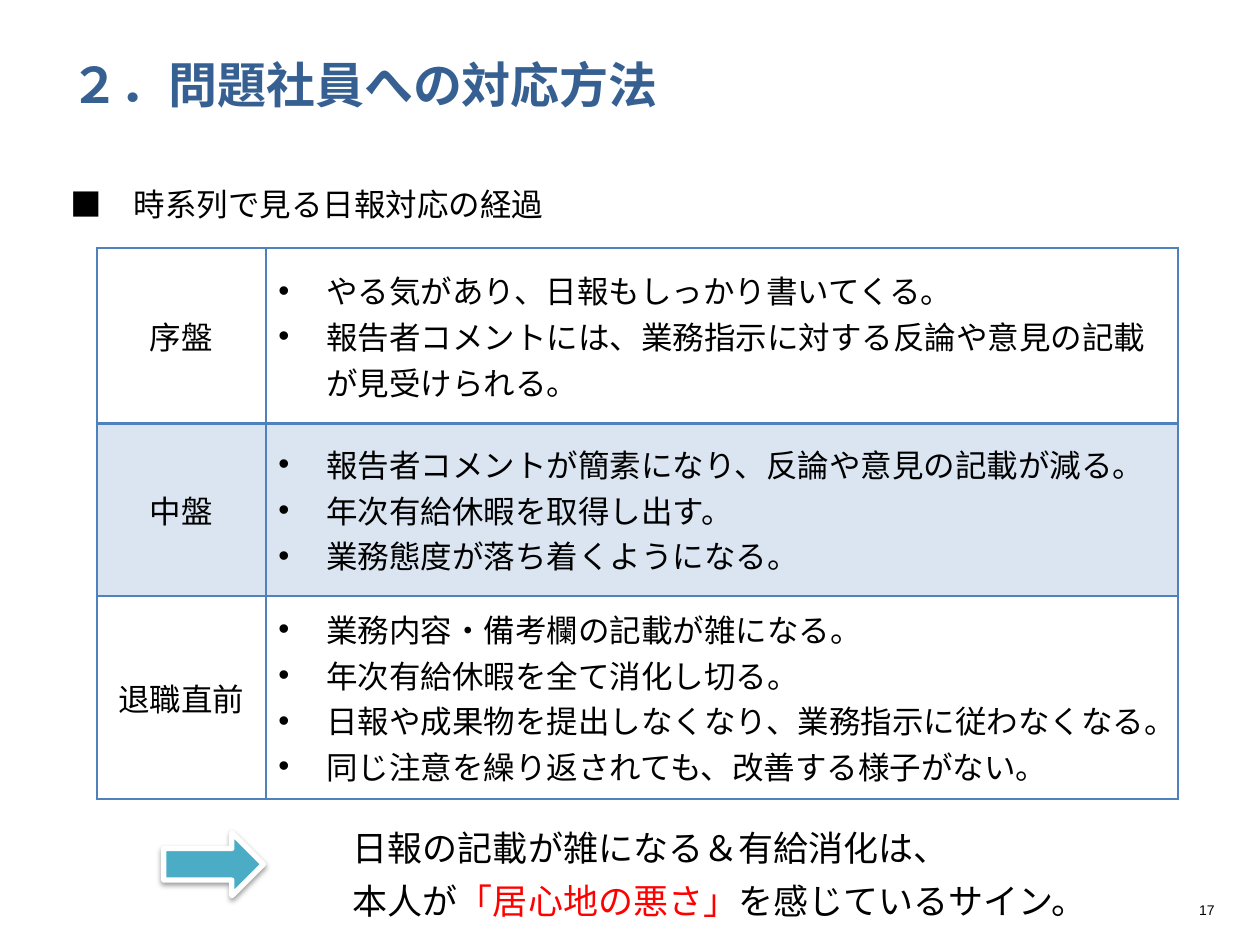
from pptx import Presentation
from pptx.dml.color import RGBColor
from pptx.enum import shapes, text
from pptx.oxml import ns, xmlchemy
from pptx.util import Inches, Pt

BLACK = RGBColor(0x00, 0x00, 0x00)
WHITE = RGBColor(0xFF, 0xFF, 0xFF)
RED = RGBColor(0xFF, 0x00, 0x00)
NAVY = RGBColor(0x37, 0x60, 0x92)
BLUE = RGBColor(0x4F, 0x81, 0xBD)
TEAL = RGBColor(0x4B, 0xAC, 0xC6)
FONT = "Noto Sans CJK JP"

STAGES = [
    ("序盤", 1.39, [
        "やる気があり、日報もしっかり書いてくる。",
        "報告者コメントには、業務指示に対する反論や意見の記載が見受けられる。",
    ]),
    ("中盤", 1.37, [
        "報告者コメントが簡素になり、反論や意見の記載が減る。",
        "年次有給休暇を取得し出す。",
        "業務態度が落ち着くようになる。",
    ]),
    ("退職直前", 1.61, [
        "業務内容・備考欄の記載が雑になる。",
        "年次有給休暇を全て消化し切る。",
        "日報や成果物を提出しなくなり、業務指示に従わなくなる。",
        "同じ注意を繰り返されても、改善する様子がない。",
    ]),
]


def add_element(parent, tag, **attributes):
    child = xmlchemy.OxmlElement(tag)
    for name, value in attributes.items():
        child.set(name, str(value))
    parent.append(child)
    return child


class SlideBuilder:
    """Holds the font and the current slide."""

    def __init__(self, slide, font):
        self.slide = slide
        self.font = font

    def style_run(self, run, size, color, bold=False, font=None):
        name = font or self.font
        run.font.size = Pt(size)
        run.font.bold = bold
        run.font.color.rgb = color
        run.font.name = name
        add_element(run.font._element, "a:ea", typeface=name)

    def add_spans(self, para, spans, size, align, spacing=None, bold=False, font=None):
        """Fill a paragraph with (wording, colour) spans."""
        para.alignment = align
        para.line_spacing = spacing
        for wording, color in spans:
            run = para.add_run()
            run.text = wording
            self.style_run(run, size, color, bold, font)

    def place(self, box, left, top, width, height, anchor, wrap=True):
        box.left, box.top = Inches(left), Inches(top)
        box.width, box.height = Inches(width), Inches(height)
        frame = box.text_frame
        frame.auto_size = text.MSO_AUTO_SIZE.NONE
        frame.word_wrap = wrap
        frame.vertical_anchor = anchor
        frame.margin_left = frame.margin_right = 0
        frame.margin_top = frame.margin_bottom = 0
        return frame

    def title(self, wording):
        frame = self.place(self.slide.shapes.title, 0.56, 0.47, 8.89, 0.43,
                           text.MSO_ANCHOR.BOTTOM)
        self.add_spans(frame.paragraphs[0], [(wording, NAVY)], 28, text.PP_ALIGN.LEFT, bold=True)

    def heading(self, wording):
        frame = self.place(self.slide.placeholders[1], 0.56, 1.39, 8.89, 0.5,
                           text.MSO_ANCHOR.TOP)
        para = frame.paragraphs[0]
        properties = para._p.get_or_add_pPr()
        properties.set("marL", "0")
        properties.set("indent", "0")
        add_element(properties, "a:buNone")
        para.space_before = Pt(0)
        self.add_spans(para, [(wording, BLACK)], 18, text.PP_ALIGN.JUSTIFY, 1.25)

    def text_box(self, place, lines, size, align, anchor=text.MSO_ANCHOR.TOP, wrap=True,
                 spacing=None, font=None):
        box = self.slide.shapes.add_textbox(0, 0, 0, 0)
        frame = self.place(box, *place, anchor, wrap)
        for index, spans in enumerate(lines):
            para = frame.add_paragraph() if index else frame.paragraphs[0]
            self.add_spans(para, spans, size, align, spacing, font=font)

    def border(self, cell, side, width):
        line = add_element(cell._tc.get_or_add_tcPr(), "a:ln" + side, w=Pt(width))
        fill = add_element(line, "a:solidFill")
        add_element(fill, "a:srgbClr", val=BLUE)

    def cell(self, cell, lines, bulleted, top, bottom, tinted):
        cell.vertical_anchor = text.MSO_ANCHOR.MIDDLE
        for side, width in (("L", 1), ("R", 1), ("T", top), ("B", bottom)):
            self.border(cell, side, width)
        if tinted:
            cell.fill.solid()
            cell.fill.fore_color.rgb = BLUE
            color = cell._tc.tcPr.find(ns.qn("a:solidFill")).find(ns.qn("a:srgbClr"))
            add_element(color, "a:alpha", val=20000)
        else:
            cell.fill.background()
        align = text.PP_ALIGN.LEFT if bulleted else text.PP_ALIGN.CENTER
        for index, wording in enumerate(lines):
            para = cell.text_frame.add_paragraph() if index else cell.text_frame.paragraphs[0]
            if bulleted:
                properties = para._p.get_or_add_pPr()
                properties.set("marL", str(Inches(0.38)))
                properties.set("indent", str(-Inches(0.38)))
                properties.set("hangingPunct", "1")
                add_element(properties, "a:buFont", typeface="Arial")
                add_element(properties, "a:buChar", char="•")
            self.add_spans(para, [(wording, BLACK)], 18, align)

    def stage_table(self, stages):
        frame = self.slide.shapes.add_table(len(stages), 2, Inches(0.77), Inches(1.97),
                                            Inches(8.58), Inches(4.37))
        table = frame.table
        table.first_row = table.horz_banding = False
        for column, width in zip(table.columns, (1.34, 7.24)):
            column.width = Inches(width)
        for index, (stage, height, signs) in enumerate(stages):
            table.rows[index].height = Inches(height)
            top = 2 if index == 1 else 1
            bottom = 2 if index == 0 else 1
            for column, lines in enumerate(([stage], signs)):
                self.cell(table.cell(index, column), lines, column == 1, top, bottom,
                          tinted=index % 2 == 1)

    def arrow(self, left, top, width, height):
        arrow = self.slide.shapes.add_shape(
            shapes.MSO_SHAPE.RIGHT_ARROW, Inches(left), Inches(top), Inches(width), Inches(height))
        arrow.fill.solid()
        arrow.fill.fore_color.rgb = TEAL
        arrow.line.color.rgb = WHITE
        arrow.line.width = Pt(3)
        arrow.shadow.inherit = False
        effects = arrow._element.spPr.find(ns.qn("a:effectLst"))
        shadow = add_element(effects, "a:outerShdw", blurRad=40000, dist=20000,
                             dir=5400000, rotWithShape=0)
        color = add_element(shadow, "a:srgbClr", val=BLACK)
        add_element(color, "a:alpha", val=38000)


def main():
    deck = Presentation()
    deck.slide_width, deck.slide_height = Inches(10), Inches(7.5)
    page = SlideBuilder(deck.slides.add_slide(deck.slide_layouts[1]), FONT)

    page.title("２．問題社員への対応方法")
    page.heading("■　時系列で見る日報対応の経過")
    page.stage_table(STAGES)
    page.arrow(1.3, 6.61, 0.79, 0.5)
    conclusion = [
        [("日報の記載が雑になる＆有給消化は、", BLACK)],
        [("本人が", BLACK), ("「居心地の悪さ」", RED), ("を感じているサイン。", BLACK)],
    ]
    page.text_box((2.8, 6.48, 7, 0.61), conclusion, 20, text.PP_ALIGN.JUSTIFY, spacing=1.25)
    page.text_box((9.35, 7.11, 0.29, 0.22), [[("17", BLACK)]], 8, text.PP_ALIGN.RIGHT,
                  text.MSO_ANCHOR.MIDDLE, wrap=False, font="Arial")
    deck.save("out.pptx")


if __name__ == "__main__":
    main()
